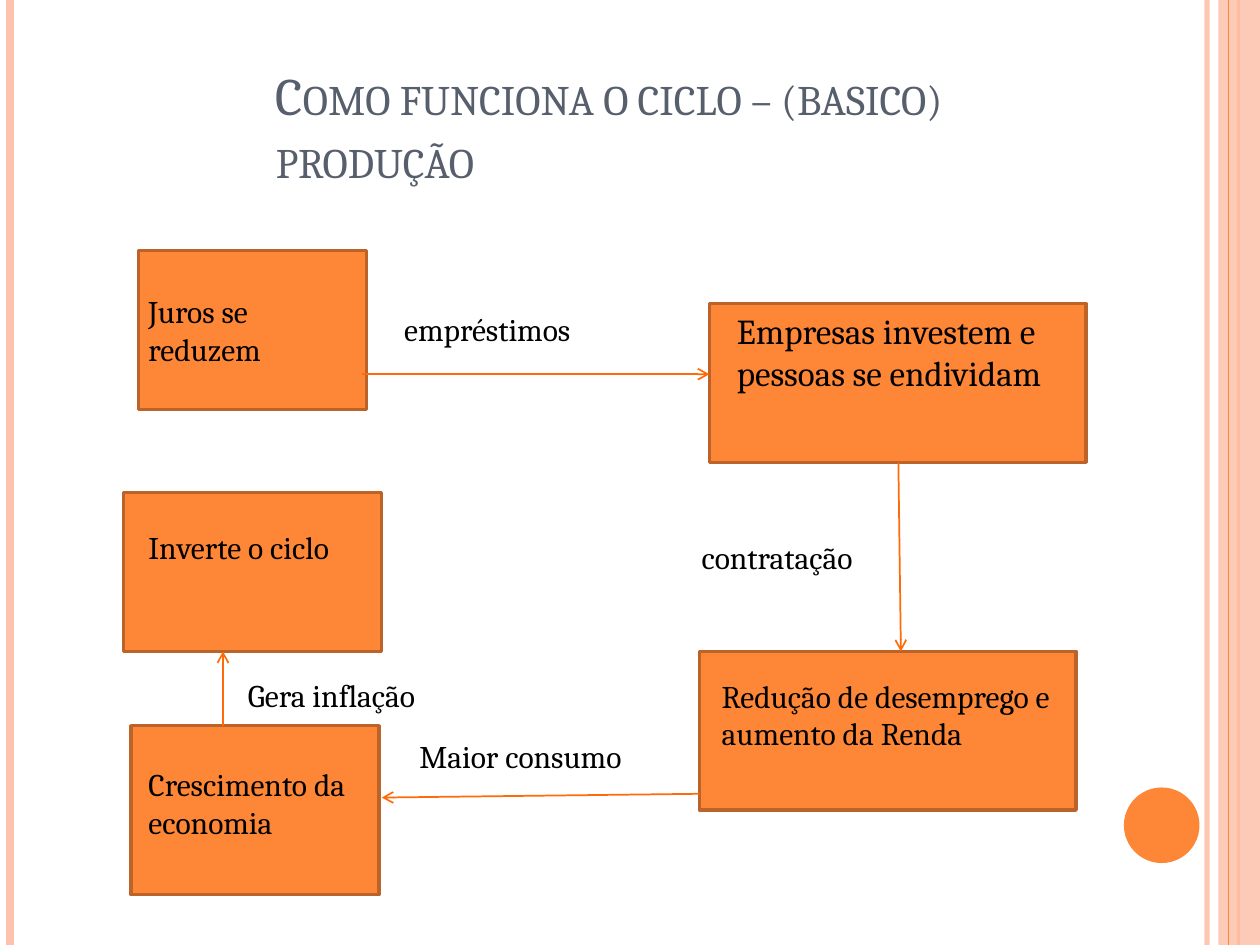
from lxml.etree import SubElement
from pptx import Presentation
from pptx.dml.color import RGBColor
from pptx.enum.shapes import MSO_CONNECTOR, MSO_SHAPE
from pptx.enum.text import MSO_ANCHOR
from pptx.oxml.ns import qn
from pptx.util import Inches, Pt

ORANGE = RGBColor(0xFE, 0x86, 0x37)
PEACH = RGBColor(0xFE, 0xC3, 0xAE)
BROWN = RGBColor(0xBC, 0x63, 0x29)
ARROW = RGBColor(0xFF, 0x6B, 0x0A)
SLATE = RGBColor(0x57, 0x5F, 0x6D)
BLACK = RGBColor(0, 0, 0)
RECT = MSO_SHAPE.RECTANGLE
OVAL = MSO_SHAPE.OVAL


def write(tf, text, size=18, color=BLACK, font="Cambria", small_caps=False):
    r = tf.paragraphs[0].add_run()
    r.text = text
    r.font.size = Pt(size)
    r.font.name = font
    r.font.color.rgb = color
    if small_caps:
        r.font._element.set("cap", "small")


def set_alpha(element, percent):
    color = element.find(".//" + qn("a:srgbClr"))
    SubElement(color, qn("a:alpha"), val=str(percent * 1000))


class Diagram:
    def __init__(self, slide):
        self.slide = slide

    def shape(self, kind, x, y, w, h, fill=ORANGE, border=None, alpha=None):
        s = self.slide.shapes.add_shape(kind, Inches(x), Inches(y), Inches(w), Inches(h))
        s.shadow.inherit = False
        s.fill.solid()
        s.fill.fore_color.rgb = fill
        if alpha:
            set_alpha(s._element.spPr, alpha)
        if border:
            s.line.color.rgb = border
            s.line.width = Pt(2)
        else:
            s.line.fill.background()

    def label(self, text, x, y, w, h, anchor=MSO_ANCHOR.TOP, **style):
        s = self.slide.shapes.add_textbox(Inches(x), Inches(y), Inches(w), Inches(h))
        tf = s.text_frame
        tf.word_wrap = True
        tf.vertical_anchor = anchor
        write(tf, text, **style)

    def line(self, x1, y1, x2, y2, color=ARROW, width=1, alpha=None, arrow=False):
        s = self.slide.shapes.add_connector(
            MSO_CONNECTOR.STRAIGHT, Inches(x1), Inches(y1), Inches(x2), Inches(y2))
        s.line.color.rgb = color
        s.line.width = Pt(width)
        ln = s._element.spPr.find(qn("a:ln"))
        if alpha:
            set_alpha(ln, alpha)
        if arrow:
            SubElement(ln, qn("a:tailEnd"), type="arrow")
        SubElement(s._element.spPr, qn("a:effectLst"))

    def stripe(self, x, color, width, alpha=None):
        self.line(x, 0, x, 7.5, color, width, alpha)


def main():
    prs = Presentation()
    prs.slide_width, prs.slide_height = Inches(10), Inches(7.5)
    d = Diagram(prs.slides.add_slide(prs.slide_layouts[6]))

    d.stripe(9.58, PEACH, 3, alpha=93)
    d.stripe(0.08, PEACH, 4.5)
    d.stripe(9.83, ORANGE, 1.5)
    d.shape(RECT, 9.67, 0, 0.33, 7.5, PEACH, alpha=87)
    d.stripe(9.75, ORANGE, 0.75)
    d.shape(OVAL, 8.92, 6.25, 0.6, 0.6)

    d.label("Como funciona o ciclo – (basico) produção", 2.09, 0.3, 6.58, 1.25,
            anchor=MSO_ANCHOR.BOTTOM, size=30, color=SLATE, small_caps=True)

    boxes = [
        (1.1, 1.99, 1.81, 1.26),
        (5.63, 2.41, 2.99, 1.26),
        (5.55, 5.17, 2.99, 1.26),
        (1.04, 5.76, 1.97, 1.34),
        (0.98, 3.91, 2.05, 1.26),
    ]
    for box in boxes:
        d.shape(RECT, *box, border=BROWN)

    arrows = [
        (2.87, 2.97, 5.63, 2.97),
        (7.13, 3.67, 7.15, 5.17),
        (5.55, 6.3, 3.03, 6.33),
        (1.77, 5.76, 1.77, 5.17),
    ]
    for ends in arrows:
        d.line(*ends, arrow=True)

    labels = [
        ("Juros se reduzem", 1.08, 2.27, 1.57, 0.71),
        ("empréstimos", 3.11, 2.41, 2.2, 0.4),
        ("contratação", 5.47, 4.22, 1.57, 0.4),
        ("Redução de desemprego e aumento da Renda", 5.63, 5.32, 2.83, 1.01),
        ("Maior consumo", 3.23, 5.8, 2.13, 0.4),
        ("Crescimento da economia", 1.08, 6.02, 1.89, 0.71),
        ("Gera inflação", 1.87, 5.32, 2.03, 0.4),
        ("Inverte o ciclo", 1.08, 4.14, 1.89, 0.4),
    ]
    for label in labels:
        d.label(*label)
    d.label("Empresas investem e pessoas se endividam", 5.75, 2.41, 2.8, 1.11, size=20)

    prs.save("out.pptx")


if __name__ == "__main__":
    main()
